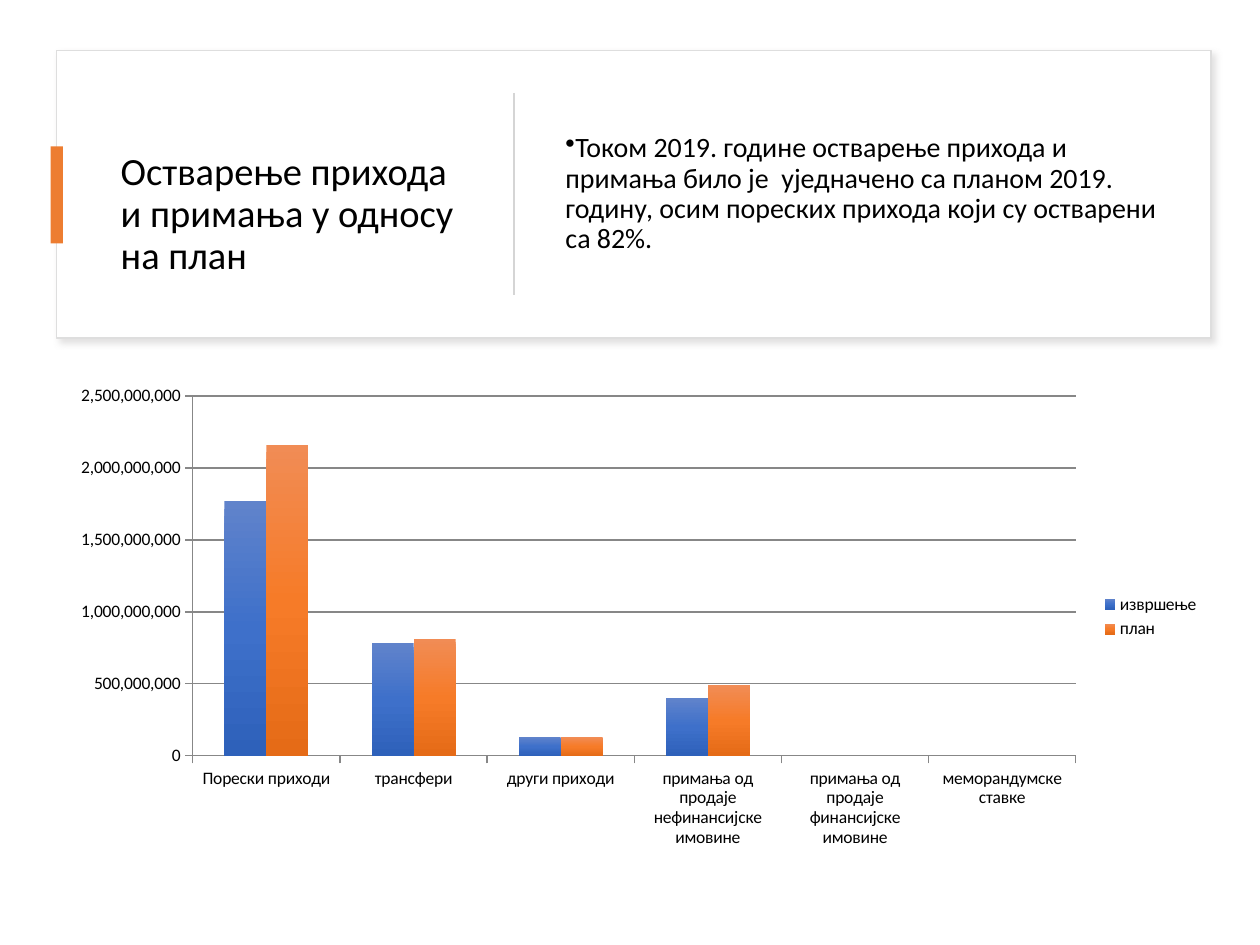
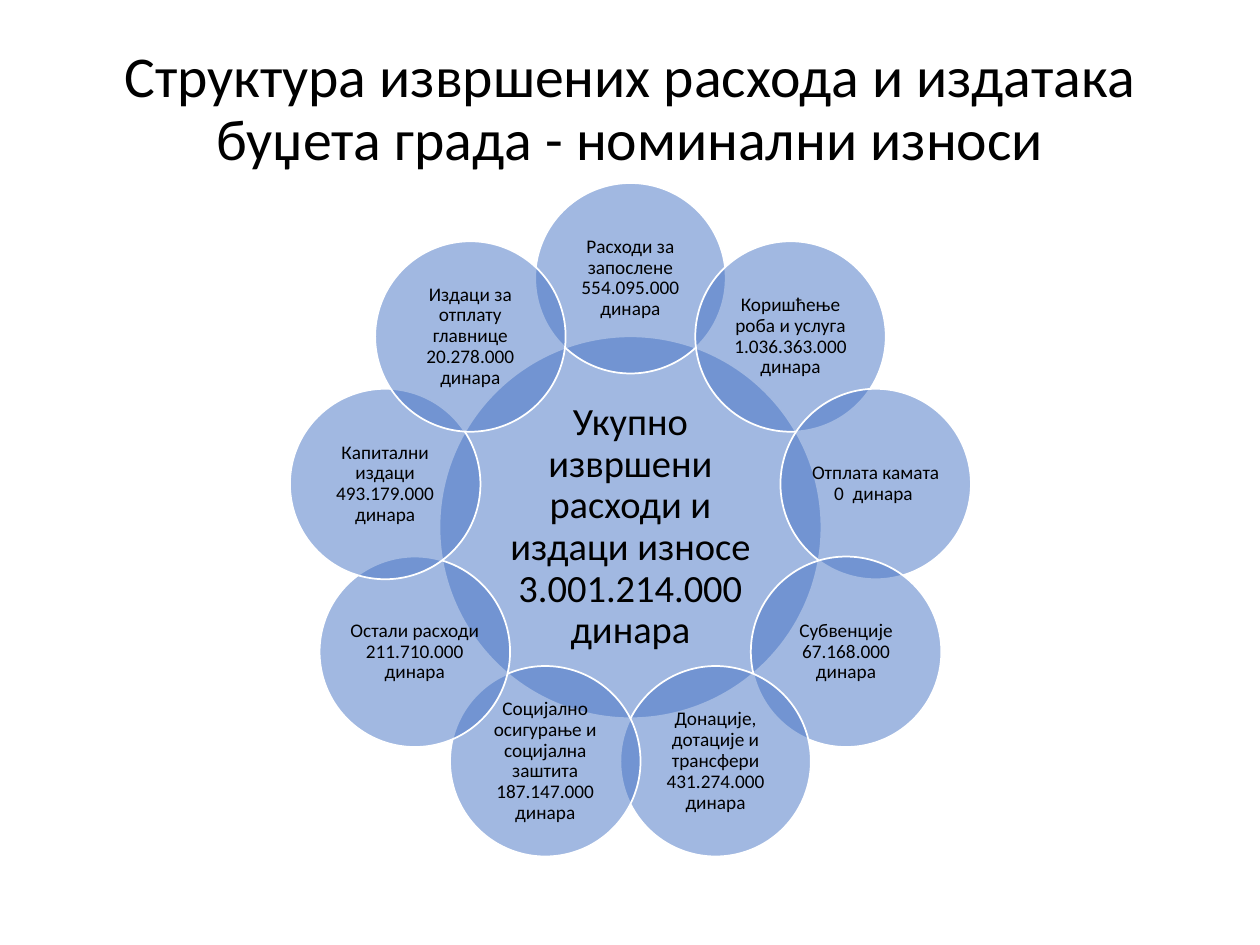
"""Builds two budget slides: revenue against plan, and the structure of expenditure."""
import math
from copy import deepcopy
from dataclasses import dataclass
from typing import Any

from lxml import etree
from pptx import Presentation
from pptx import util as u
from pptx.chart import data as chart_data
from pptx.dml import color
from pptx.enum import chart as chart_enum
from pptx.enum import shapes, text
from pptx.oxml import ns


@dataclass(frozen=True)
class Theme:
    font: str = "Calibri"
    ink: str = "000000"
    paper: str = "FFFFFF"
    blue: str = "4472C4"
    orange: str = "ED7D31"
    frame: str = "DEDEDE"
    divider: str = "D5D5D5"
    shadow: str = "C5C3C3"
    axis: str = "878787"
    blue_shades: tuple[str, ...] = ("6083CB", "3E70CA", "2E61BA")
    orange_shades: tuple[str, ...] = ("F18C55", "F67B28", "E56B17")
    headline: float = 33
    heading: float = 22
    body: float = 16
    bubble: float = 11
    chart: float = 10


@dataclass(frozen=True)
class Box:
    left: float
    top: float
    width: float
    height: float

    def lengths(self) -> tuple[u.Length, ...]:
        return tuple(u.Cm(v) for v in (self.left, self.top, self.width, self.height))


@dataclass(frozen=True)
class Bubble:
    label: str
    center_x: float
    center_y: float
    diameter: float
    size: float
    inset: float

    def box(self) -> Box:
        radius = self.diameter / 2
        return Box(self.center_x - radius, self.center_y - radius, self.diameter, self.diameter)


@dataclass(frozen=True)
class Series:
    name: str
    values: tuple[int, ...]
    shades: tuple[str, ...]


THEME = Theme()
CENTER = text.PP_ALIGN.CENTER
LEFT = text.PP_ALIGN.LEFT
MIDDLE = text.MSO_ANCHOR.MIDDLE

FRAME = Box(1.14, 1.02, 23.27, 5.79)
ACCENT = Box(1.02, 2.95, 0.25, 1.96)
HEADING = Box(2.18, 1.63, 7.42, 4.57)
COMMENT = Box(11.15, 1.63, 12.5, 4.57)
CHART = Box(1.17, 7.59, 23.27, 9.68)
HEADLINE = Box(0.76, 0.64, 23.88, 2.97)
DIVIDER_X, DIVIDER_TOP, DIVIDER_BOTTOM = 10.36, 1.87, 5.94

CATEGORIES = (
    "Порески приходи", "трансфери", "други приходи",
    "примања од продаје нефинансијске имовине",
    "примања од продаје финансијске имовине", "меморандумске ставке",
)
REVENUE = (
    Series("извршење", (1770000000, 780000000, 130000000, 400000000, 0, 0), THEME.blue_shades),
    Series("план", (2160000000, 810000000, 130000000, 490000000, 0, 0), THEME.orange_shades),
)

TOTAL = "Укупно извршени расходи и издаци износе 3.001.214.000 динара"
EXPENSES = (
    "Расходи за запослене 554.095.000 динара",
    "Коришћење роба и услуга 1.036.363.000 динара",
    "Отплата камата 0  динара ",
    "Субвенције 67.168.000 динара",
    "Донације, дотације и трансфери 431.274.000 динара",
    "Социјално осигурање и социјална заштита 187.147.000 динара",
    "Остали расходи 211.710.000 динара",
    "Капитални издаци 493.179.000 динара",
    "Издаци за отплату главнице 20.278.000 динара",
)
HUB_X, HUB_Y, HUB_DIAMETER = 12.71, 10.63, 7.7
RING_RADIUS, PETAL_DIAMETER = 5.02, 3.84


def rgb(value: str) -> color.RGBColor:
    return color.RGBColor.from_string(value)


def apply(target: Any, values: dict[str, Any]) -> None:
    for name, value in values.items():
        setattr(target, name, value)


def place(shape: Any, box: Box) -> None:
    apply(shape, dict(zip(("left", "top", "width", "height"), box.lengths())))


def write(shape: Any, wording: str, size: float, align: Any = LEFT,
          anchor: Any = MIDDLE, **margins: float) -> Any:
    frame = shape.text_frame
    frame.text = wording
    apply(frame, {"word_wrap": True, "auto_size": text.MSO_AUTO_SIZE.NONE,
                  "vertical_anchor": anchor})
    apply(frame, {f"margin_{side}": u.Cm(gap) for side, gap in margins.items()})
    paragraph = frame.paragraphs[0]
    apply(paragraph, {"alignment": align, "line_spacing": 0.9})
    apply(paragraph.runs[0].font, {"name": THEME.font, "size": u.Pt(size)})
    paragraph.runs[0].font.color.rgb = rgb(THEME.ink)
    return paragraph


def add_filled(slide: Any, kind: Any, box: Box, fill: str, line: str | None = None) -> Any:
    shape = slide.shapes.add_shape(kind, *box.lengths())
    shape.shadow.inherit = False
    shape.fill.solid()
    shape.fill.fore_color.rgb = rgb(fill)
    if line:
        shape.line.color.rgb = rgb(line)
        shape.line.width = u.Pt(1)
    else:
        shape.line.fill.background()
    return shape


def add_child(parent: Any, tag: str, **attributes: str) -> Any:
    return etree.SubElement(parent, ns.qn(tag), attributes)


def cast_shadow(shape: Any) -> None:
    effects = shape._element.spPr.find(ns.qn("a:effectLst"))
    outer = add_child(effects, "a:outerShdw", blurRad="50800", dist="38100",
                      dir="2700000", algn="tl", rotWithShape="0")
    tone = add_child(outer, "a:srgbClr", val=THEME.shadow)
    add_child(tone, "a:alpha", val="50000")


def add_divider(slide: Any) -> None:
    divider = slide.shapes.add_connector(
        shapes.MSO_CONNECTOR.STRAIGHT, u.Cm(DIVIDER_X), u.Cm(DIVIDER_TOP),
        u.Cm(DIVIDER_X), u.Cm(DIVIDER_BOTTOM))
    divider.line.color.rgb = rgb(THEME.divider)
    divider.line.width = u.Pt(1)
    add_child(divider._element.spPr, "a:effectLst")


def add_bubble(slide: Any, bubble: Bubble) -> None:
    circle = add_filled(slide, shapes.MSO_SHAPE.OVAL, bubble.box(), THEME.blue, THEME.paper)
    tone = circle._element.spPr.find(f"{ns.qn('a:solidFill')}/{ns.qn('a:srgbClr')}")
    add_child(tone, "a:alpha", val="50000")
    write(circle, bubble.label, bubble.size, CENTER,
          **dict.fromkeys(("left", "top", "right", "bottom"), bubble.inset))


def shade(bars: Any, shades: tuple[str, ...]) -> None:
    fill = bars.format.fill
    fill.gradient()
    fill.gradient_angle = 270
    stops = bars._element.find(f".//{ns.qn('a:gsLst')}")
    stops.insert(1, deepcopy(stops[0]))
    for stop, tone, position in zip(fill.gradient_stops, shades, (0, 0.5, 1)):
        stop.color.rgb = rgb(tone)
        stop.position = position


def add_revenue_chart(slide: Any) -> None:
    figures = chart_data.CategoryChartData(number_format="#,##0")
    figures.categories = CATEGORIES
    for series in REVENUE:
        figures.add_series(series.name, series.values)
    chart = slide.shapes.add_chart(
        chart_enum.XL_CHART_TYPE.COLUMN_CLUSTERED, *CHART.lengths(), figures).chart
    apply(chart, {"has_title": False, "has_legend": True})
    apply(chart.legend, {"position": chart_enum.XL_LEGEND_POSITION.RIGHT,
                         "include_in_layout": False})
    apply(chart.font, {"name": THEME.font, "size": u.Pt(THEME.chart)})
    chart.font.color.rgb = rgb(THEME.ink)
    apply(chart.plots[0], {"gap_width": 150, "overlap": 0, "vary_by_categories": False})
    for bars, series in zip(chart.plots[0].series, REVENUE):
        shade(bars, series.shades)
    amounts = chart.value_axis
    apply(amounts, {"minimum_scale": 0, "maximum_scale": 2500000000,
                    "major_unit": 500000000, "has_major_gridlines": True})
    apply(amounts.tick_labels, {"number_format": "#,##0", "number_format_is_linked": False})
    for axis in (amounts, chart.category_axis):
        axis.major_tick_mark = chart_enum.XL_TICK_MARK.OUTSIDE
    for ruled in (amounts, chart.category_axis, amounts.major_gridlines):
        ruled.format.line.color.rgb = rgb(THEME.axis)
        ruled.format.line.width = u.Pt(0.75)


def add_titled_slide(deck: Any) -> Any:
    return deck.slides.add_slide(deck.slide_layouts[5])


def build_revenue(deck: Any) -> None:
    slide = add_titled_slide(deck)
    rectangle = shapes.MSO_SHAPE.RECTANGLE
    cast_shadow(add_filled(slide, rectangle, FRAME, THEME.paper, THEME.frame))
    heading = slide.shapes.title
    slide.shapes._spTree.append(heading._element)
    place(heading, HEADING)
    write(heading, "Остварење прихода и примања у односу на план", THEME.heading, top=0.97)
    add_filled(slide, rectangle, ACCENT, THEME.orange)
    add_divider(slide)
    comment = write(
        slide.shapes.add_textbox(*COMMENT.lengths()),
        "Током 2019. године остварење прихода и примања било је  уједначено са планом "
        "2019. годину, осим пореских прихода који су остварени са 82%.", THEME.body)
    properties = comment._p.get_or_add_pPr()
    apply_indent = {"marL": "0", "indent": "0"}
    for name, value in apply_indent.items():
        properties.set(name, value)
    add_child(properties, "a:buChar", char="•")
    add_revenue_chart(slide)


def build_expenses(deck: Any) -> None:
    slide = add_titled_slide(deck)
    headline = slide.shapes.title
    place(headline, HEADLINE)
    write(headline, "Структура извршених расхода и издатака буџета града - номинални износи",
          THEME.headline, CENTER, text.MSO_ANCHOR.BOTTOM)
    add_bubble(slide, Bubble(TOTAL, HUB_X, HUB_Y, HUB_DIAMETER, THEME.heading, 0.08))
    for index, expense in enumerate(EXPENSES):
        angle = math.tau * index / len(EXPENSES)
        add_bubble(slide, Bubble(
            expense, HUB_X + RING_RADIUS * math.sin(angle),
            HUB_Y - RING_RADIUS * math.cos(angle), PETAL_DIAMETER, THEME.bubble, 0.05))


def main() -> None:
    deck = Presentation()
    apply(deck, {"slide_width": u.Cm(25.4), "slide_height": u.Cm(19.05)})
    build_revenue(deck)
    build_expenses(deck)
    deck.save("out.pptx")


if __name__ == "__main__":
    main()
